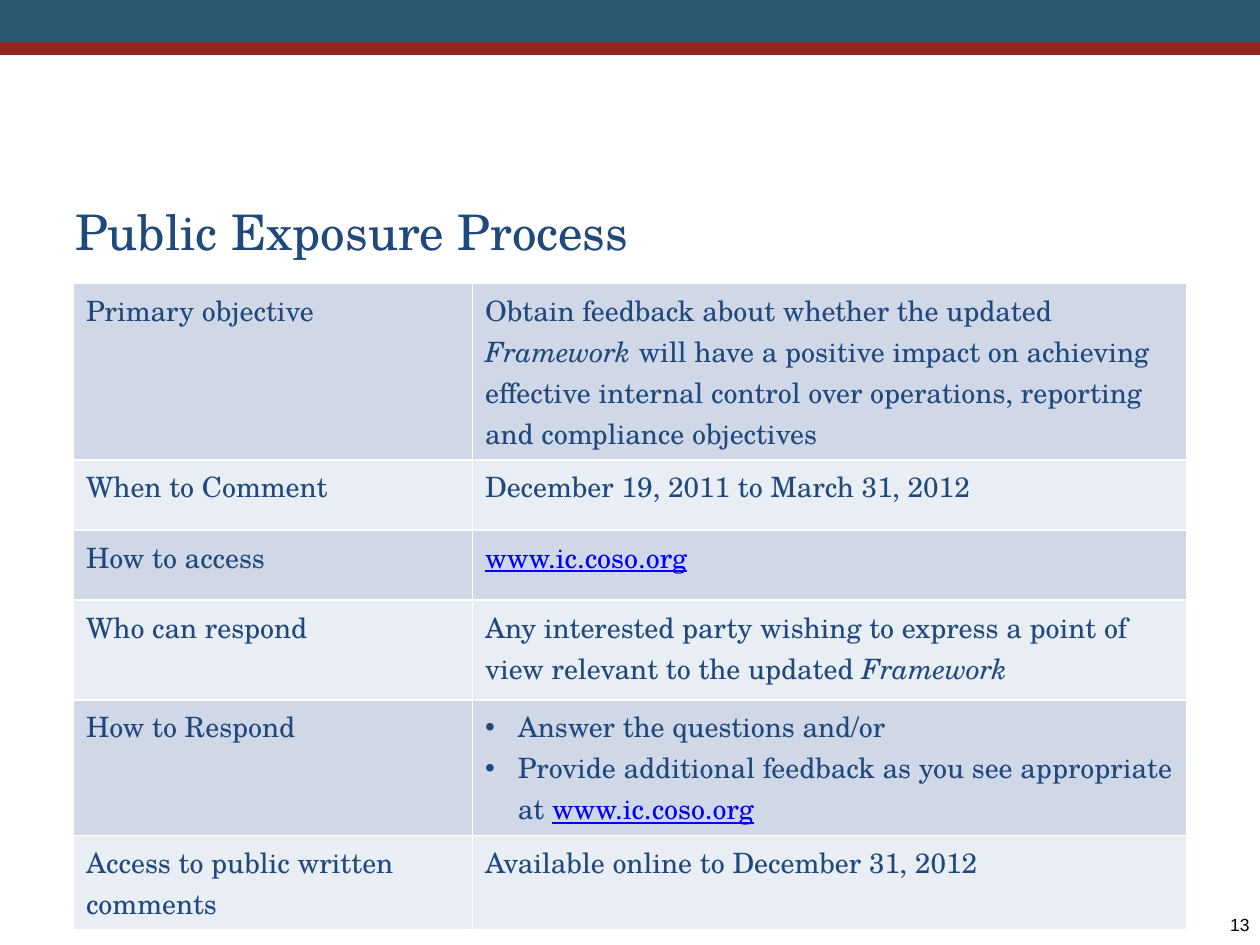
from lxml.etree import SubElement
from pptx import Presentation
from pptx.dml.color import RGBColor
from pptx.enum.shapes import MSO_SHAPE
from pptx.enum.text import MSO_ANCHOR, PP_ALIGN
from pptx.oxml.ns import qn
from pptx.util import Pt

NAVY, LINK = "1F497D", "0000FF"
ROW_FILLS = ["D0D8E8", "E9EDF4"]
SITE = ("www.ic.coso.org", {"color": LINK, "underline": True})
FRAMEWORK = ("Framework", {"italic": True})


def color(hex_string):
    return RGBColor.from_string(hex_string)


def write(paragraph, text, size=16, font="TeX Gyre Schola", ink=NAVY, **style):
    """Add one formatted run to a paragraph."""
    run = paragraph.add_run()
    run.text = text
    run.font.size = Pt(size)
    run.font.name = font
    run.font.color.rgb = color(style.get("color", ink))
    run.font.italic = style.get("italic")
    run.font.underline = style.get("underline")


class Deck:
    def __init__(self, width, height):
        self.presentation = Presentation()
        self.presentation.slide_width = Pt(width)
        self.presentation.slide_height = Pt(height)
        self.slide = self.presentation.slides.add_slide(
            self.presentation.slide_layouts[6])

    def band(self, left, top, width, height, fill):
        band = self.slide.shapes.add_shape(
            MSO_SHAPE.RECTANGLE, Pt(left), Pt(top), Pt(width), Pt(height))
        band.shadow.inherit = False
        band.fill.solid()
        band.fill.fore_color.rgb = color(fill)
        band.line.fill.background()

    def text(self, left, top, width, height, words, align=PP_ALIGN.LEFT,
             anchor=MSO_ANCHOR.TOP, margins=(7.2, 3.6), **style):
        frame = self.slide.shapes.add_textbox(
            Pt(left), Pt(top), Pt(width), Pt(height)).text_frame
        frame.word_wrap = True
        frame.vertical_anchor = anchor
        frame.margin_left = frame.margin_right = Pt(margins[0])
        frame.margin_top = frame.margin_bottom = Pt(margins[1])
        frame.paragraphs[0].alignment = align
        write(frame.paragraphs[0], words, **style)

    def table(self, left, top, widths, heights, rows):
        table = self.slide.shapes.add_table(
            len(rows), len(widths), Pt(left), Pt(top),
            Pt(sum(widths)), Pt(sum(heights))).table
        table.first_row = False
        table.horz_banding = False
        for column, width in zip(table.columns, widths):
            column.width = Pt(width)
        for index, (height, (topic, details)) in enumerate(zip(heights, rows)):
            table.rows[index].height = Pt(height)
            fill = ROW_FILLS[index % 2]
            self.cell(table.cell(index, 0), [[topic]], fill)
            self.cell(table.cell(index, 1), details, fill, len(details) > 1)

    def cell(self, cell, paragraphs, fill, bulleted=False):
        self.borders(cell)
        cell.fill.solid()
        cell.fill.fore_color.rgb = color(fill)
        frame = cell.text_frame
        for index, pieces in enumerate(paragraphs):
            paragraph = frame.add_paragraph() if index else frame.paragraphs[0]
            if bulleted:
                self.bullet(paragraph)
            for piece in pieces:
                words, style = (piece, {}) if isinstance(piece, str) else piece
                write(paragraph, words, **style)

    def borders(self, cell):
        properties = cell._tc.get_or_add_tcPr()
        for side in ("lnL", "lnR", "lnT", "lnB"):
            line = SubElement(properties, qn(f"a:{side}"), w=str(Pt(1)))
            solid = SubElement(line, qn("a:solidFill"))
            SubElement(solid, qn("a:srgbClr"), val="FFFFFF")

    def bullet(self, paragraph, indent=18.7):
        properties = paragraph._p.get_or_add_pPr()
        properties.set("marL", str(Pt(indent)))
        properties.set("indent", str(-Pt(indent)))
        SubElement(properties, qn("a:buFont"), typeface="Arial")
        SubElement(properties, qn("a:buChar"), char="•")


def main():
    deck = Deck(720, 540)

    # Header bands
    deck.band(0, 0, 720, 24, "2A5970")
    deck.band(0, 24, 720, 7.4, "91271F")

    # Title
    deck.text(36, 96, 636, 72, "Public Exposure Process",
              anchor=MSO_ANCHOR.MIDDLE, size=28)

    # Exposure process: topic, then paragraphs made of text pieces
    process = [
        ("Primary objective", [[
            "Obtain feedback about whether the updated ", FRAMEWORK,
            " will have a positive impact on achieving effective internal "
            "control over operations, reporting and compliance objectives"]]),
        ("When to Comment", [["December 19, 2011 to March 31, 2012"]]),
        ("How to access", [[SITE]]),
        ("Who can respond", [[
            "Any interested party wishing to express a point of view "
            "relevant to the updated ", FRAMEWORK]]),
        ("How to Respond", [
            ["Answer the questions and/or"],
            ["Provide additional feedback as you see appropriate at ", SITE]]),
        ("Access to public written comments",
         [["Available online to December 31, 2012"]]),
    ]
    deck.table(42, 162, [228, 408], [100.8, 40.1, 40.1, 57, 77.4, 54], process)

    # Slide number
    deck.text(594, 522.3, 120, 12, "13", align=PP_ALIGN.RIGHT, margins=(0, 0),
              size=10, font="Arial", ink="000000")

    deck.presentation.save("out.pptx")


if __name__ == "__main__":
    main()
